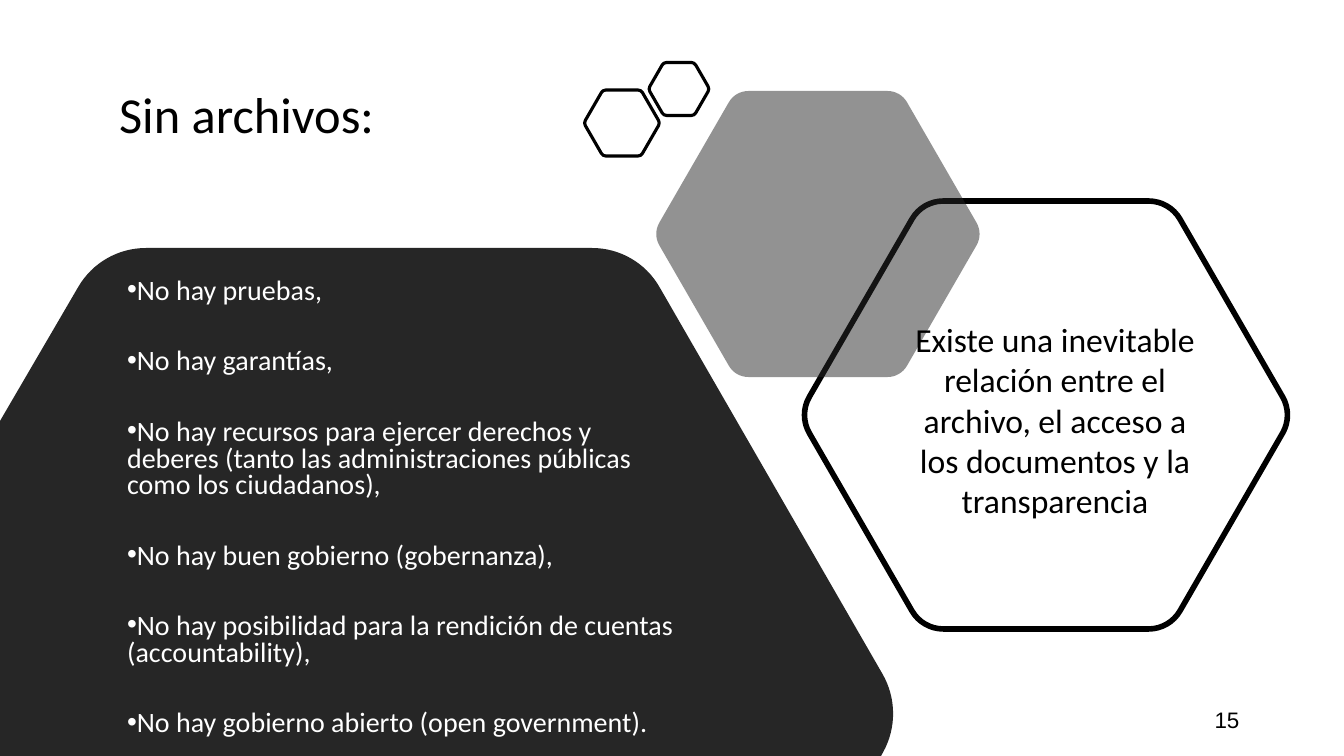
from math import cos, hypot, pi, sin, sqrt

from lxml import etree
from pptx import Presentation
from pptx.dml.color import RGBColor
from pptx.enum.text import MSO_ANCHOR, MSO_AUTO_SIZE, PP_ALIGN
from pptx.oxml.ns import qn
from pptx.util import Pt

LEFT, CENTER = PP_ALIGN.LEFT, PP_ALIGN.CENTER
TOP = MSO_ANCHOR.TOP
NO_AUTOFIT = MSO_AUTO_SIZE.NONE
BLACK = RGBColor(0, 0, 0)
WHITE = RGBColor(255, 255, 255)
CHARCOAL = RGBColor(0x26, 0x26, 0x26)

EMU_PER_PX = 914400 / 100.8
SLIDE_SIZE = (1344, 756)
HANDLE = 0.38  # control point distance from a corner, as a share of its rounding

TITLE = "Sin archivos:"
CONSEQUENCES = [
    "No hay pruebas,",
    "No hay garantías,",
    "No hay recursos para ejercer derechos y deberes (tanto las "
    "administraciones públicas como los ciudadanos),",
    "No hay buen gobierno (gobernanza),",
    "No hay posibilidad para la rendición de cuentas (accountability),",
    "No hay gobierno abierto (open government).",
]
STATEMENT = ("Existe una inevitable relación entre el archivo, el acceso a "
             "los documentos y la transparencia")
SLIDE_NUMBER = "15"

# Left, top, width, height
TITLE_BOX = (109, 84, 284, 66)
LIST_BOX = (117, 274, 582, 482)
STATEMENT_BOX = (901, 314, 308, 308)
NUMBER_BOX = (1076, 701, 302, 40)

# Corner x, y and how far the rounding reaches along each side
PANEL_CORNERS = [(0, 421, 0), (101, 248, 45), (637, 248, 45),
                 (905, 713, 45), (881, 756, 0), (0, 756, 0)]
# Centre x, centre y, height, corner rounding
STATEMENT_HEXAGON = (1046, 415, 428, 21)
GRAY_HEXAGON = (818, 234, 286, 13)
SMALL_HEXAGONS = [(622, 123, 66, 3), (679, 89, 53, 3)]


def px(length):
    return round(length * EMU_PER_PX)


def hexagon_corners(center_x, center_y, height, rounding):
    radius = height / sqrt(3)
    return [(center_x + radius * cos(k * pi / 3),
             center_y + radius * sin(k * pi / 3), rounding) for k in range(6)]


def toward(corner, neighbor, distance):
    dx, dy = neighbor[0] - corner[0], neighbor[1] - corner[1]
    share = distance / hypot(dx, dy)
    return corner[0] + dx * share, corner[1] + dy * share


def add_step(path_element, tag, points):
    step = etree.SubElement(path_element, qn(tag))
    for x, y in points:
        etree.SubElement(step, qn("a:pt"), x=str(px(x)), y=str(px(y)))


def round_corners(shape, corners):
    """Redraw a sharp polygon with one curve at each rounded corner."""
    left = min(x for x, y, rounding in corners)
    top = min(y for x, y, rounding in corners)
    local = [(x - left, y - top) for x, y, rounding in corners]
    path_element = shape._element.find(".//" + qn("a:path"))
    for step in list(path_element):
        path_element.remove(step)
    for index, corner in enumerate(local):
        rounding = corners[index][2]
        before, after = local[index - 1], local[(index + 1) % len(local)]
        tag = "a:lnTo" if index else "a:moveTo"
        add_step(path_element, tag, [toward(corner, before, rounding)])
        if rounding:
            add_step(path_element, "a:cubicBezTo", [
                toward(corner, before, rounding * HANDLE),
                toward(corner, after, rounding * HANDLE),
                toward(corner, after, rounding)])
    add_step(path_element, "a:close", [])


def add_outline(shapes, corners, fill=None, line_width=None):
    points = [(px(x), px(y)) for x, y, rounding in corners]
    builder = shapes.build_freeform(*points[0])
    builder.add_line_segments(points[1:], close=True)
    shape = builder.convert_to_shape()
    round_corners(shape, corners)
    shape.shadow.inherit = False
    if fill is None:
        shape.fill.background()
    else:
        shape.fill.solid()
        shape.fill.fore_color.rgb = fill
    if line_width is None:
        shape.line.fill.background()
    else:
        shape.line.color.rgb = BLACK
        shape.line.width = Pt(line_width)
    return shape


def place(shape, box):
    shape.left, shape.top, shape.width, shape.height = map(px, box)


def write(shape, lines, size, color, alignment, font="Calibri"):
    frame = shape.text_frame
    frame.word_wrap = True
    frame.auto_size = NO_AUTOFIT
    frame.text = "\n".join(lines)
    for paragraph in frame.paragraphs:
        paragraph.alignment = alignment
        paragraph.space_before = Pt(0)
        paragraph.font.name = font
        paragraph.font.size = Pt(size)
        paragraph.font.color.rgb = color
    return frame


def main():
    presentation = Presentation()
    presentation.slide_width, presentation.slide_height = map(px, SLIDE_SIZE)
    slide = presentation.slides.add_slide(presentation.slide_layouts[1])
    shapes = slide.shapes
    title, body = shapes.title, slide.placeholders[1]

    add_outline(shapes, PANEL_CORNERS, fill=CHARCOAL)
    add_outline(shapes, hexagon_corners(*STATEMENT_HEXAGON), line_width=4)
    gray = add_outline(shapes, hexagon_corners(*GRAY_HEXAGON), fill=CHARCOAL)
    color = gray._element.spPr.find(qn("a:solidFill"))[0]
    etree.SubElement(color, qn("a:alpha"), val="50000")
    group = shapes.add_group_shape()
    for hexagon in SMALL_HEXAGONS:
        add_outline(group.shapes, hexagon_corners(*hexagon), line_width=2.25)

    # Bring the placeholders in front of the hexagons
    for placeholder, box in ((body, LIST_BOX), (title, TITLE_BOX)):
        shapes._spTree.append(placeholder._element)
        place(placeholder, box)

    frame = write(body, CONSEQUENCES, 20, WHITE, LEFT)
    frame.vertical_anchor = TOP
    for paragraph in frame.paragraphs:
        properties = paragraph._p.get_or_add_pPr()
        properties.set("marL", "0")
        properties.set("indent", "-228600")
        paragraph.line_spacing = 0.8
        paragraph.space_after = Pt(31)

    frame = write(title, [TITLE], 36, BLACK, LEFT)
    frame.paragraphs[0].line_spacing = 0.9

    statement = shapes.add_textbox(*map(px, STATEMENT_BOX))
    write(statement, [STATEMENT], 24, BLACK, CENTER)
    number = shapes.add_textbox(*map(px, NUMBER_BOX))
    write(number, [SLIDE_NUMBER], 16, BLACK, CENTER, "Arial")

    presentation.save("out.pptx")


if __name__ == "__main__":
    main()
